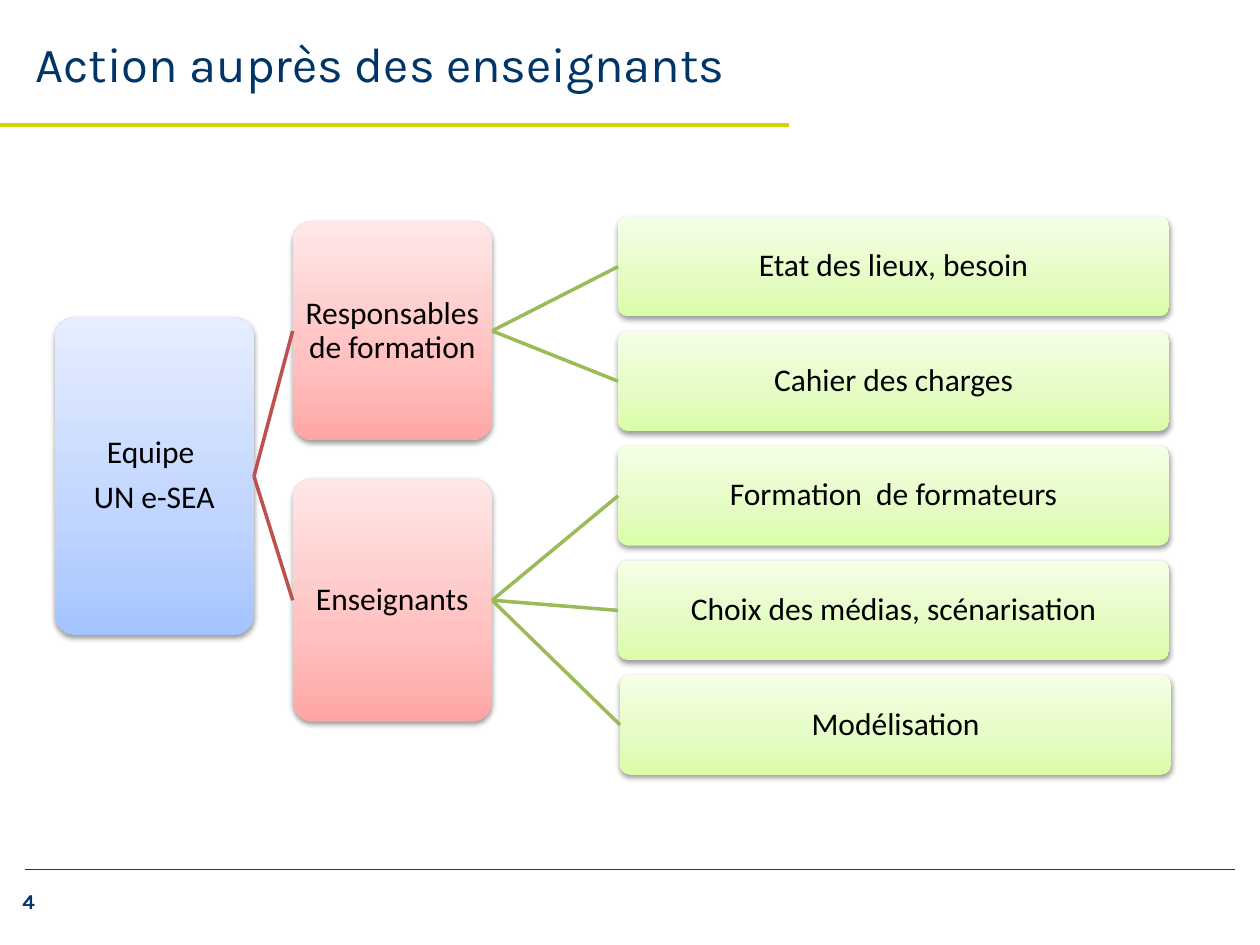
from copy import deepcopy
from dataclasses import dataclass

from lxml import etree
from pptx import Presentation
from pptx.dml.color import RGBColor
from pptx.enum.shapes import MSO_CONNECTOR, MSO_SHAPE
from pptx.enum.text import MSO_ANCHOR, PP_ALIGN
from pptx.oxml.ns import qn
from pptx.util import Cm, Pt

ROUND = MSO_SHAPE.ROUNDED_RECTANGLE
LINE = MSO_CONNECTOR.STRAIGHT
MIDDLE = MSO_ANCHOR.MIDDLE
LEFT, CENTER = PP_ALIGN.LEFT, PP_ALIGN.CENTER

NAVY, LIME = "003667", "D0D700"
BLUE = ("A4C4FF", "BFD4FF", "E6EEFF")
RED = ("FFA6A5", "FFC0BF", "FFE7E7")
GREEN = ("DAFDA7", "E4FCC2", "F5FFE7")
RED_LINE, GREEN_LINE = "C0504D", "9BBB59"
STOPS = (0, 0.35, 1)


@dataclass
class Node:
    """A box of the tree, with lengths in centimetres."""
    text: str
    left: float
    top: float
    width: float
    height: float
    tones: tuple[str, str, str]

    @property
    def mid(self) -> float:
        return self.top + self.height / 2

    @property
    def right(self) -> float:
        return self.left + self.width


def color(code: str) -> RGBColor:
    return RGBColor.from_string(code)


def draw_line(slide, x1: float, y1: float, x2: float, y2: float,
              tone: str, width: float) -> None:
    line = slide.shapes.add_connector(LINE, Cm(x1), Cm(y1), Cm(x2), Cm(y2))
    line.line.color.rgb = color(tone)
    line.line.width = Pt(width)
    etree.SubElement(line._element.spPr, qn("a:effectLst"))


def paint(shape, tones: tuple[str, str, str]) -> None:
    """Fill with three tones from bottom to top."""
    fill = shape.fill
    fill.gradient()
    fill.gradient_angle = 90
    stops = shape._element.spPr.find(qn("a:gradFill")).find(qn("a:gsLst"))
    stops.append(deepcopy(stops[-1]))
    for stop, place, tone in zip(fill.gradient_stops, STOPS, tones):
        stop.position = place
        stop.color.rgb = color(tone)


def add_shadow(shape) -> None:
    shape.shadow.inherit = False
    effects = shape._element.spPr.find(qn("a:effectLst"))
    outer = etree.SubElement(effects, qn("a:outerShdw"), blurRad=str(Pt(3.1)),
                             dist=str(Pt(1.6)), dir="5400000", rotWithShape="0")
    black = etree.SubElement(outer, qn("a:srgbClr"), val="000000")
    etree.SubElement(black, qn("a:alpha"), val="38000")


def draw_node(slide, node: Node) -> None:
    shape = slide.shapes.add_shape(ROUND, Cm(node.left), Cm(node.top),
                                   Cm(node.width), Cm(node.height))
    shape.adjustments[0] = 0.1
    paint(shape, node.tones)
    shape.line.fill.background()
    add_shadow(shape)
    frame = shape.text_frame
    frame.text = node.text
    frame.word_wrap = True
    frame.vertical_anchor = MIDDLE
    frame.margin_left = frame.margin_right = Cm(0.03)
    frame.margin_top = frame.margin_bottom = Cm(0.03)
    for para in frame.paragraphs:
        para.alignment = CENTER
        para.line_spacing = 0.9
        para.space_after = Pt(6.3)
        para.font.name = "Calibri"
        para.font.size = Pt(18)
        para.font.color.rgb = color("000000")


def draw_links(slide, start: Node, ends: list[Node], tone: str) -> None:
    for end in ends:
        draw_line(slide, start.right, start.mid, end.left, end.mid, tone, 2)


def set_text(shape, text: str, size: float, bold: bool) -> None:
    shape.text_frame.text = text
    shape.text_frame.word_wrap = True
    para = shape.text_frame.paragraphs[0]
    para.alignment = LEFT
    para.font.name = "Karla"
    para.font.size = Pt(size)
    para.font.bold = bold
    para.font.color.rgb = color(NAVY)


def main() -> None:
    deck = Presentation()
    deck.slide_width, deck.slide_height = Cm(25.4), Cm(19.05)
    slide = deck.slides.add_slide(deck.slide_layouts[5])

    # Rules, page number and title
    draw_line(slide, 0.51, 17.53, 24.89, 17.53, "004080", 0.5)
    draw_line(slide, 0, 2.52, 15.9, 2.52, LIME, 2)
    number = slide.shapes.add_textbox(Cm(0.2), Cm(17.78), Cm(2.41), Cm(0.76))
    set_text(number, "4", 12, True)
    title = slide.shapes.title
    title.left, title.top, title.width, title.height = (
        Cm(0.46), Cm(0), Cm(22.35), Cm(2.52))
    title.text_frame.vertical_anchor = MIDDLE
    set_text(title, "Action auprès des enseignants", 28, False)

    # Tree boxes
    team = Node("Equipe \nUN e-SEA", 1.1, 6.4, 4.02, 6.4, BLUE)
    heads = Node("Responsables de formation", 5.9, 4.46, 4.02, 4.42, RED)
    staff = Node("Enseignants", 5.9, 9.65, 4.02, 4.9, RED)
    tasks = [
        Node(text, 12.46, 4.37 + 2.31 * row, 11.11, 2.01, GREEN)
        for row, text in enumerate((
            "Etat des lieux, besoin",
            "Cahier des charges",
            "Formation  de formateurs",
            "Choix des médias, scénarisation",
            "Modélisation",
        ))
    ]
    tasks[-1].left = 12.5

    # Boxes, then the links over their edges
    for node in (team, heads, staff, *tasks):
        draw_node(slide, node)
    draw_links(slide, team, [heads, staff], RED_LINE)
    draw_links(slide, heads, tasks[:2], GREEN_LINE)
    draw_links(slide, staff, tasks[2:], GREEN_LINE)

    deck.save("out.pptx")


if __name__ == "__main__":
    main()
